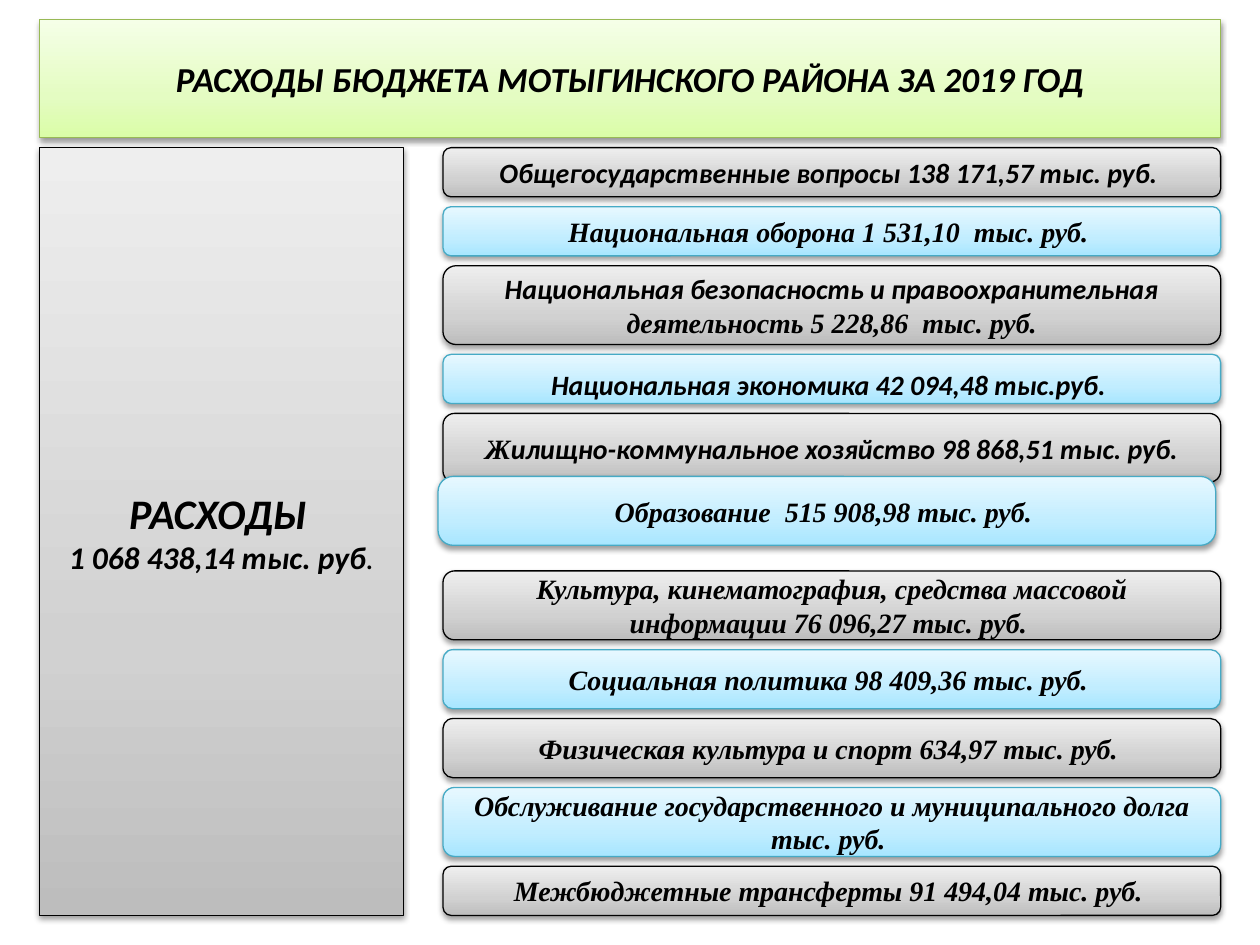
from copy import deepcopy

from lxml.etree import SubElement
from pptx import Presentation
from pptx.dml.color import RGBColor
from pptx.enum.shapes import MSO_SHAPE as SHAPE
from pptx.enum.text import MSO_ANCHOR as ANCHOR, PP_ALIGN as ALIGN
from pptx.oxml.ns import qn
from pptx.util import Inches, Pt

SLIDE_W, SLIDE_H = 10, 7.5
UNIT = SLIDE_W / 128  # grid of 128 columns by 96 rows
SANS, SERIF = "Calibri", "Times New Roman"

# Gradient from bottom to top, then outline
GREEN = (("DAFDA7", "E4FCC2", "F5FFE7"), "98B955")
GRAY = (("BDBDBD", "D1D1D1", "EEEEEE"), "000000")
BLUE = (("A7E6FF", "C1EDFF", "E7F8FF"), "46AAC5")
STOP_POSITIONS = (0, 0.35, 1)

# Height in rows, then text pieces with their fonts
EXPENSES = [
    (5, [("Общегосударственные вопросы 138 171,57 тыс. руб. ", SANS)]),
    (5, [("Национальная оборона 1 531,10  тыс. руб. ", SERIF)]),
    (8, [("Национальная безопасность и правоохранительная ", SANS),
         ("деятельность 5 228,86  тыс. руб.", SERIF)]),
    (5, [("Национальная экономика 42 094,48 тыс.руб. ", SANS)]),
    (7, [("Ж", SERIF),
         ("илищно-коммунальное хозяйство 98 868,51 тыс. руб.", SANS)]),
    (7, [("Образование  515 908,98 тыс. руб. ", SERIF)]),
    (7, [("Культура, кинематография, средства массовой "
          "информации 76 096,27 тыс. руб. ", SERIF)]),
    (6, [("Социальная политика 98 409,36 тыс. руб. ", SERIF)]),
    (6, [("Физическая культура и спорт 634,97 тыс. руб. ", SERIF)]),
    (7, [("Обслуживание государственного и муниципального долга "
          "тыс. руб. ", SERIF)]),
    (5, [("Межбюджетные трансферты 91 494,04 тыс. руб. ", SERIF)]),
]
ECONOMY, EDUCATION = 3, 5


def color(hex_value):
    return RGBColor.from_string(hex_value)


def add_shadow(shape):
    shape.shadow.inherit = False
    effects = shape._element.spPr.find(qn("a:effectLst"))
    shadow = SubElement(effects, qn("a:outerShdw"), blurRad="40000",
                        dist="20000", dir="5400000", rotWithShape="0")
    black = SubElement(shadow, qn("a:srgbClr"), val="000000")
    SubElement(black, qn("a:alpha"), val="38000")


def add_panel(slide, preset, box, theme):
    """Gradient panel; box is left, top, width, height in grid units."""
    panel = slide.shapes.add_shape(preset, *(Inches(n * UNIT) for n in box))
    shades, outline = theme
    panel.fill.gradient()
    panel.fill.gradient_angle = 90
    stop_list = panel._element.spPr.find(".//" + qn("a:gsLst"))
    stop_list.insert(1, deepcopy(stop_list[0]))
    for stop, shade, position in zip(panel.fill.gradient_stops, shades,
                                     STOP_POSITIONS):
        stop.color.rgb = color(shade)
        stop.position = position
    panel.line.color.rgb = color(outline)
    panel.line.width = Pt(0.75)
    add_shadow(panel)
    panel.text_frame.word_wrap = True
    panel.text_frame.vertical_anchor = ANCHOR.MIDDLE
    return panel


def write(paragraph, pieces, size):
    paragraph.alignment = ALIGN.CENTER
    for text, typeface in pieces:
        run = paragraph.add_run()
        run.text = text
        font = run.font
        font.name, font.size = typeface, Pt(size)
        font.bold = font.italic = True
        font.color.rgb = color("000000")


def add_title(slide, box):
    banner = add_panel(slide, SHAPE.RECTANGLE, box, GREEN)
    write(banner.text_frame.paragraphs[0],
          [("РАСХОДЫ БЮДЖЕТА МОТЫГИНСКОГО РАЙОНА ЗА 2019 ГОД", SANS)], 20)


def add_total(slide, box):
    frame = add_panel(slide, SHAPE.RECTANGLE, box, GRAY).text_frame
    heading, amount = frame.paragraphs[0], frame.add_paragraph()
    write(heading, [("РАСХОДЫ", SANS), (" ", SANS)], 24)
    heading.runs[1].font.size = Pt(18)
    write(amount, [("1 068 438,14 тыс. руб", SANS), (".", SANS)], 18)
    amount.runs[1].font.bold = False


def add_expenses(slide, left, top, width):
    """Stack of bars in alternating colours, one row apart."""
    for index, (rows, pieces) in enumerate(EXPENSES):
        shift_x, shift_y = (-0.5, -1.6) if index == EDUCATION else (0, 0)
        bar = add_panel(slide, SHAPE.ROUNDED_RECTANGLE,
                        (left + shift_x, top + shift_y, width, rows),
                        BLUE if index % 2 else GRAY)
        write(bar.text_frame.paragraphs[0], pieces, 16)
        if index == ECONOMY:  # text sits a little low in this bar
            bar.text_frame.margin_top = Inches(0.14)
        if index == EDUCATION:
            bar.adjustments[0] = 0.22
        top += rows + 1


def main():
    deck = Presentation()
    deck.slide_width, deck.slide_height = Inches(SLIDE_W), Inches(SLIDE_H)
    slide = deck.slides.add_slide(deck.slide_layouts[6])
    add_title(slide, (4, 2, 120, 12))
    add_total(slide, (4, 15, 37, 78))
    add_expenses(slide, left=45, top=15, width=79)
    deck.save("out.pptx")


if __name__ == "__main__":
    main()
